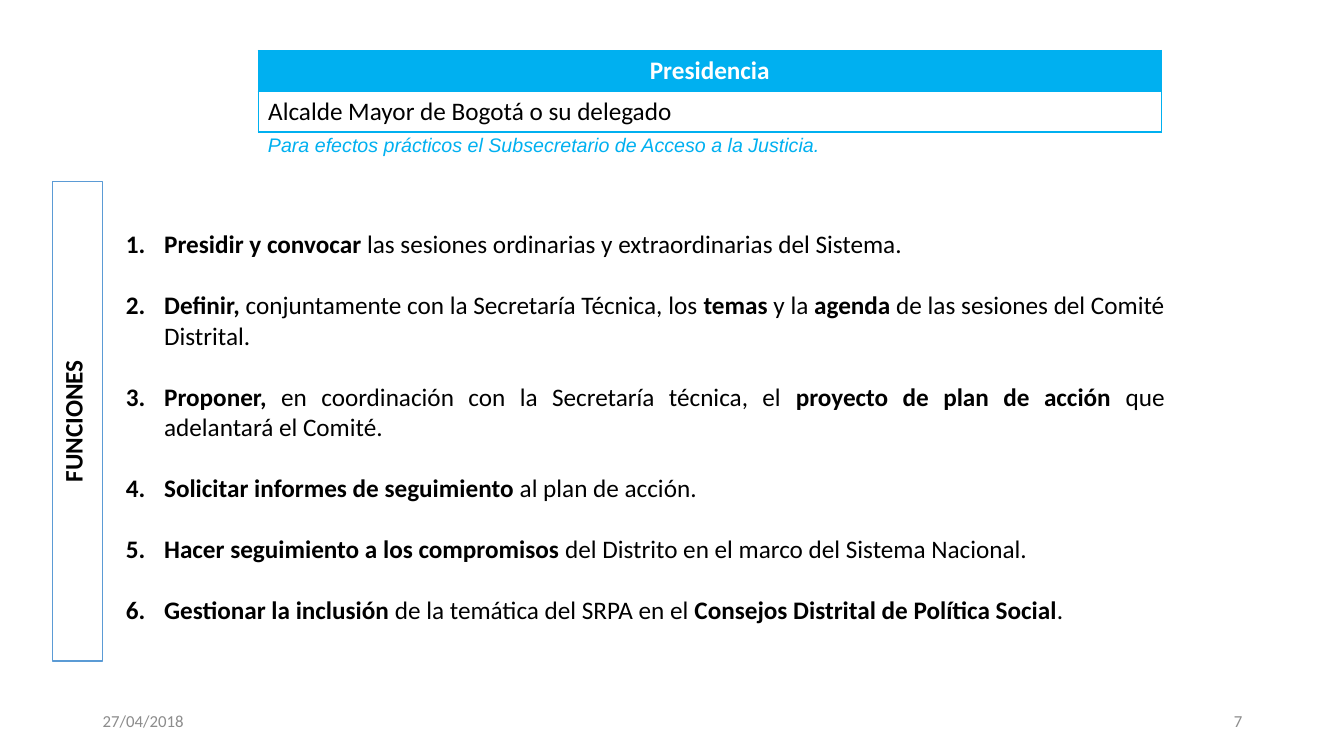
from pptx import Presentation
from pptx.dml.color import RGBColor
from pptx.enum.shapes import MSO_SHAPE
from pptx.enum.text import MSO_ANCHOR, PP_ALIGN
from pptx.oxml.ns import qn
from pptx.util import Inches, Pt
from lxml.etree import SubElement

CYAN = "00B0F0"
BLACK = "000000"
WHITE = "FFFFFF"
GREY = "8C8C8C"

TASKS = [
    [("Presidir y convocar ", True),
     ("las sesiones ordinarias y extraordinarias del Sistema.", False)],
    [("Definir, ", True),
     ("conjuntamente con la Secretaría Técnica, los ", False),
     ("temas", True), (" y la", False), (" agenda", True),
     (" de las sesiones del Comité Distrital.", False)],
    [("Proponer, ", True),
     ("en coordinación con la Secretaría técnica, el", False),
     (" proyecto de plan de acción ", True),
     ("que adelantará el Comité.", False)],
    [("Solicitar informes de seguimiento ", True),
     ("al plan de acción.", False)],
    [("Hacer seguimiento a los compromisos ", True),
     ("del Distrito en el marco del Sistema Nacional.", False)],
    [("Gestionar la inclusión ", True),
     ("de la temática del SRPA en el ", False),
     ("Consejos Distrital de Política Social", True), (".", False)],
]


def paint(code):
    return RGBColor.from_string(code)


def write(para, text, size=18, font="Calibri", color=BLACK,
          bold=False, italic=False, align=PP_ALIGN.LEFT):
    para.alignment = align
    run = para.add_run()
    run.text = text
    run.font.size = Pt(size)
    run.font.name = font
    run.font.bold = bold
    run.font.italic = italic
    run.font.color.rgb = paint(color)


def add_box(slide, left, top, width, height, anchor=MSO_ANCHOR.TOP):
    box = slide.shapes.add_textbox(
        Inches(left), Inches(top), Inches(width), Inches(height))
    frame = box.text_frame
    frame.word_wrap = True
    frame.vertical_anchor = anchor
    return frame


def add_label(slide, text, left, top, width, height,
              anchor=MSO_ANCHOR.TOP, **style):
    frame = add_box(slide, left, top, width, height, anchor)
    write(frame.paragraphs[0], text, **style)


def add_border(cell, color):
    props = cell._tc.get_or_add_tcPr()
    for index, side in enumerate(("lnL", "lnR", "lnT", "lnB")):
        line = props.makeelement(qn("a:" + side), {"w": str(Pt(1))})
        fill = SubElement(line, qn("a:solidFill"))
        SubElement(fill, qn("a:srgbClr"), val=color)
        props.insert(index, line)


def add_grid(slide):
    rows = [
        ("Presidencia", CYAN,
         dict(color=WHITE, bold=True, align=PP_ALIGN.CENTER)),
        ("Alcalde Mayor de Bogotá o su delegado", None, {}),
    ]
    grid = slide.shapes.add_table(
        len(rows), 1, Inches(2.56), Inches(0.5),
        Inches(8.96), Inches(0.81)).table
    for index, (text, fill, style) in enumerate(rows):
        cell = grid.cell(index, 0)
        if fill:
            cell.fill.solid()
            cell.fill.fore_color.rgb = paint(fill)
        else:
            cell.fill.background()
        add_border(cell, CYAN)
        write(cell.text_frame.paragraphs[0], text, **style)


def add_list(slide, items):
    frame = add_box(slide, 1.15, 2.22, 10.5, 4.04)
    for index, parts in enumerate(items):
        para = frame.add_paragraph() if index else frame.paragraphs[0]
        props = para._p.get_or_add_pPr()
        props.set("marL", str(Inches(0.38)))
        props.set("indent", str(Inches(-0.38)))
        SubElement(props, qn("a:buFont"), typeface="+mj-lt")
        SubElement(props, qn("a:buAutoNum"), type="arabicPeriod")
        if index:
            para.space_before = Pt(22)
        for text, bold in parts:
            write(para, text, bold=bold, align=PP_ALIGN.JUSTIFY)


def add_banner(slide, text):
    bar = slide.shapes.add_shape(
        MSO_SHAPE.RECTANGLE, Inches(0.52), Inches(1.8),
        Inches(0.5), Inches(4.76))
    bar.shadow.inherit = False
    bar.fill.solid()
    bar.fill.fore_color.rgb = paint(WHITE)
    bar.line.color.rgb = paint("5B9BD5")
    bar.line.width = Pt(1)
    frame = bar.text_frame
    frame.word_wrap = True
    frame.vertical_anchor = MSO_ANCHOR.TOP
    frame._txBody.bodyPr.set("vert", "vert270")
    write(frame.paragraphs[0], text, bold=True, align=PP_ALIGN.CENTER)


def main():
    deck = Presentation()
    deck.slide_width = Inches(13.33)
    deck.slide_height = Inches(7.5)
    slide = deck.slides.add_slide(deck.slide_layouts[6])
    for text, left, align in (("27/04/2018", 0.92, PP_ALIGN.LEFT),
                              ("7", 9.42, PP_ALIGN.RIGHT)):
        add_label(slide, text, left, 6.95, 3, 0.4, MSO_ANCHOR.MIDDLE,
                  size=12, color=GREY, align=align)
    add_grid(slide)
    add_list(slide, TASKS)
    add_banner(slide, "FUNCIONES")
    add_label(slide,
              "Para efectos prácticos el Subsecretario de Acceso a la Justicia.",
              2.56, 1.27, 7.13, 0.34,
              size=14, font="Arial", color=CYAN, italic=True)
    deck.save("out.pptx")


if __name__ == "__main__":
    main()
